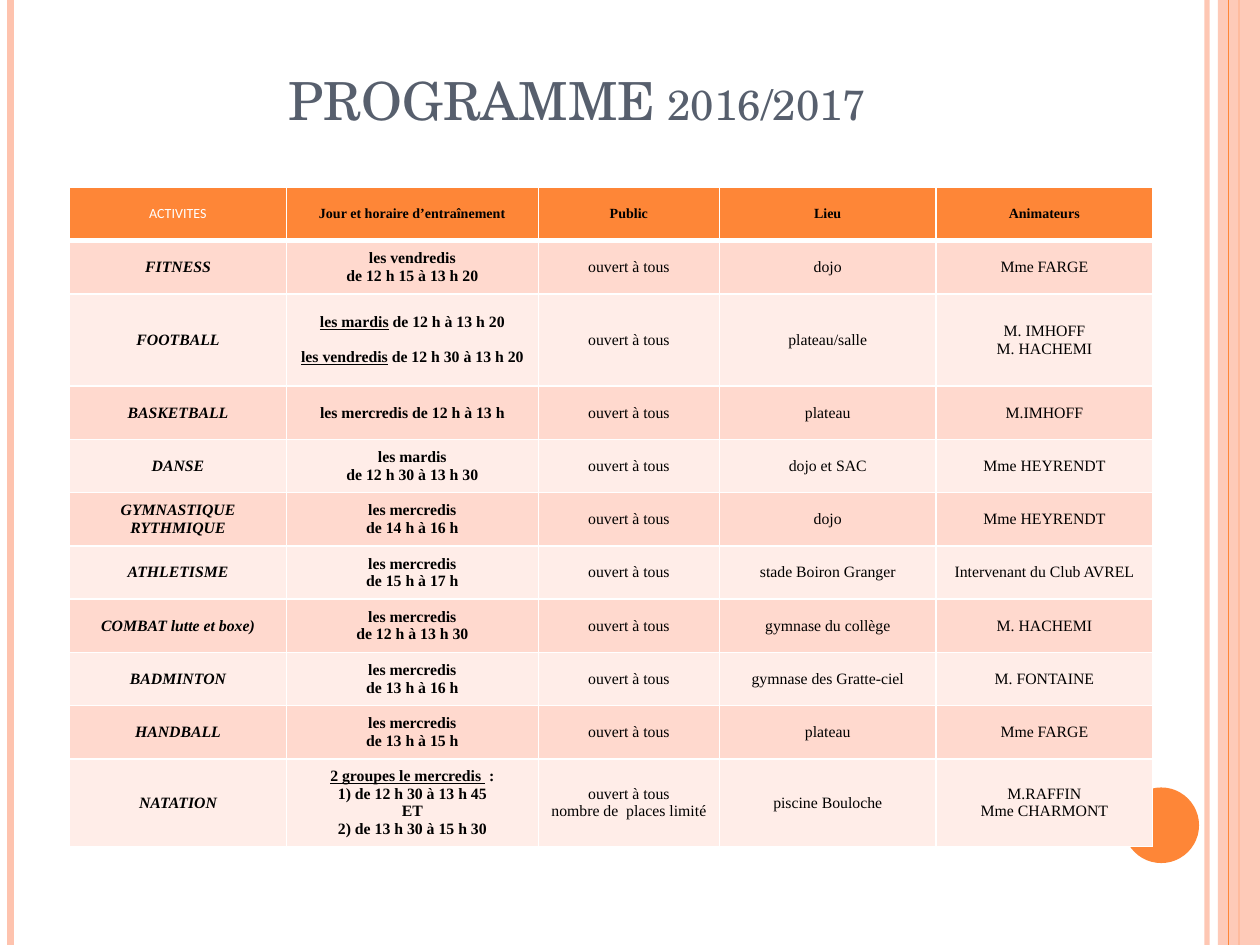
from lxml.etree import SubElement
from pptx import Presentation
from pptx.dml.color import RGBColor
from pptx.enum.shapes import MSO_CONNECTOR, MSO_SHAPE
from pptx.enum.text import MSO_ANCHOR, PP_ALIGN
from pptx.oxml import parse_xml
from pptx.oxml.ns import nsdecls, qn
from pptx.util import Pt

COLORS = {
    "orange": "FE8637", "peach": "FEC3AE", "slate": "575F6D",
    "band_dark": "FFD9CE", "band_light": "FFEDE8",
    "white": "FFFFFF", "black": "000000",
}
RGB = {name: RGBColor.from_string(value) for name, value in COLORS.items()}


def set_opacity(element, percent):
    for color in element.iter(qn("a:srgbClr")):
        SubElement(color, qn("a:alpha"), val=str(percent * 1000))


def set_cell_borders(cell, top, bottom):
    """Draw white borders; they must come before the fill in tcPr."""
    widths = {"lnL": 1, "lnR": 1, "lnT": top, "lnB": bottom}
    for position, (side, width) in enumerate(widths.items()):
        border = parse_xml(
            f'<a:{side} {nsdecls("a")} w="{Pt(width)}"><a:solidFill>'
            f'<a:srgbClr val="{COLORS["white"]}"/></a:solidFill></a:{side}>')
        cell._tc.get_or_add_tcPr().insert(position, border)


prs = Presentation()
prs.slide_width, prs.slide_height = Pt(720), Pt(540)
slide = prs.slides.add_slide(prs.slide_layouts[5])
shapes = slide.shapes

# Side stripes: x, colour, width, opacity; the wide band lies under the last one
stripes = [
    (689.75, "peach", 3, 93),
    (6, "peach", 4.5, 100),
    (708, "orange", 1.5, 100),
    (702, "orange", 0.75, 100),
]
for x, color, width, opacity in stripes:
    if x == 702:
        band = shapes.add_shape(MSO_SHAPE.RECTANGLE, Pt(696), 0, Pt(24), Pt(540))
        band.shadow.inherit = False
        band.fill.solid()
        band.fill.fore_color.rgb = RGB["peach"]
        band.line.fill.background()
        set_opacity(band._element.spPr, 87)
    stripe = shapes.add_connector(MSO_CONNECTOR.STRAIGHT, Pt(x), 0, Pt(x), Pt(540))
    stripe.line.color.rgb = RGB[color]
    stripe.line.width = Pt(width)
    if opacity < 100:
        set_opacity(stripe._element.spPr, opacity)
    SubElement(stripe._element.spPr, qn("a:effectLst"))

disc = shapes.add_shape(MSO_SHAPE.OVAL, Pt(642), Pt(450), Pt(43.2), Pt(43.2))
disc.shadow.inherit = False
disc.fill.solid()
disc.fill.fore_color.rgb = RGB["orange"]
disc.line.fill.background()

title = shapes.title
title.left, title.top, title.width, title.height = Pt(36), Pt(21.6), Pt(588), Pt(56.9)
title.text_frame.vertical_anchor = MSO_ANCHOR.BOTTOM
heading = title.text_frame.paragraphs[0]
heading.alignment = PP_ALIGN.CENTER
heading_run = heading.add_run()
heading_run.text = "PROGRAMME 2016/2017"
heading_run.font.name = "TeX Gyre Schola"
heading_run.font.size = Pt(30)
heading_run.font.color.rgb = RGB["slate"]
heading_run.font._element.set("cap", "small")

# Newlines part paragraphs; underscores enclose underlined words
programme = [
    ("ACTIVITES", "Jour et horaire d’entraînement", "Public", "Lieu", "Animateurs"),
    ("FITNESS", "les vendredis\nde 12 h 15 à 13 h 20", "ouvert à tous",
     "dojo", "Mme FARGE"),
    ("FOOTBALL", "_les mardis_ de 12 h à 13 h 20\n_les vendredis_ de 12 h 30 à 13 h 20",
     "ouvert à tous", "plateau/salle", "M. IMHOFF\nM. HACHEMI"),
    ("BASKETBALL", "les mercredis de 12 h à 13 h", "ouvert à tous",
     "plateau", "M.IMHOFF"),
    ("DANSE", "les mardis\nde 12 h 30 à 13 h 30", "ouvert à tous",
     "dojo et SAC", "Mme HEYRENDT"),
    ("GYMNASTIQUE RYTHMIQUE", "les mercredis\nde 14 h à 16 h", "ouvert à tous",
     "dojo", "Mme HEYRENDT"),
    ("ATHLETISME", "les mercredis\nde 15 h à 17 h", "ouvert à tous",
     "stade Boiron Granger", "Intervenant du Club AVREL"),
    ("COMBAT lutte et boxe)", "les mercredis\nde 12 h à 13 h 30", "ouvert à tous",
     "gymnase du collège", "M. HACHEMI"),
    ("BADMINTON", "les mercredis\nde 13 h à 16 h", "ouvert à tous",
     "gymnase des Gratte-ciel", "M. FONTAINE"),
    ("HANDBALL", "les mercredis\nde 13 h à 15 h", "ouvert à tous",
     "plateau", "Mme FARGE"),
    ("NATATION", "_2 groupes le mercredis _ :\n1) de 12 h 30 à 13 h 45\nET\n"
     "2) de 13 h 30 à 15 h 30", "ouvert à tous\nnombre de  places limité",
     "piscine Bouloche", "M.RAFFIN\nMme CHARMONT"),
]
column_widths = [123.8, 144, 103.5, 123.8, 123.8]
row_heights = {"FOOTBALL": 52.7, "NATATION": 50}
default_height = 30.45

table = shapes.add_table(len(programme), len(column_widths), Pt(39.8), Pt(107),
                         Pt(sum(column_widths)), Pt(376.7)).table
table.horz_banding = False
for column, width in zip(table.columns, column_widths):
    column.width = Pt(width)

cell_format = {
    "margin_left": Pt(5), "margin_right": Pt(5), "margin_top": 0, "margin_bottom": 0,
    "vertical_anchor": MSO_ANCHOR.MIDDLE,
}
for r, entries in enumerate(programme):
    activity = entries[0]
    table.rows[r].height = Pt(row_heights.get(activity, default_height))
    is_header = r == 0
    row_fill = "orange" if is_header else ("band_light", "band_dark")[r % 2]
    for c, entry in enumerate(entries):
        cell = table.cell(r, c)
        for attribute, value in cell_format.items():
            setattr(cell, attribute, value)
        cell.fill.solid()
        cell.fill.fore_color.rgb = RGB[row_fill]
        set_cell_borders(cell, top=3 if r == 1 else 1, bottom=3 if is_header else 1)

        is_corner = is_header and c == 0
        font_format = {
            "name": "Calibri" if is_corner else "Times New Roman",
            "size": Pt(8 if is_header else 9),
            "bold": c > 0 if is_header else c < 2,
            "italic": c == 0 and not is_header,
        }
        for n, line in enumerate(entry.split("\n")):
            frame = cell.text_frame
            paragraph = frame.add_paragraph() if n else frame.paragraphs[0]
            paragraph.alignment = PP_ALIGN.CENTER
            if n and activity == "FOOTBALL" and c == 1:
                paragraph.space_before = Pt(10)
            for k, words in enumerate(line.split("_")):
                if not words:
                    continue
                run = paragraph.add_run()
                run.text = words
                for attribute, value in font_format.items():
                    setattr(run.font, attribute, value)
                run.font.underline = k % 2 == 1
                run.font.color.rgb = RGB["white" if is_corner else "black"]

prs.save("out.pptx")
